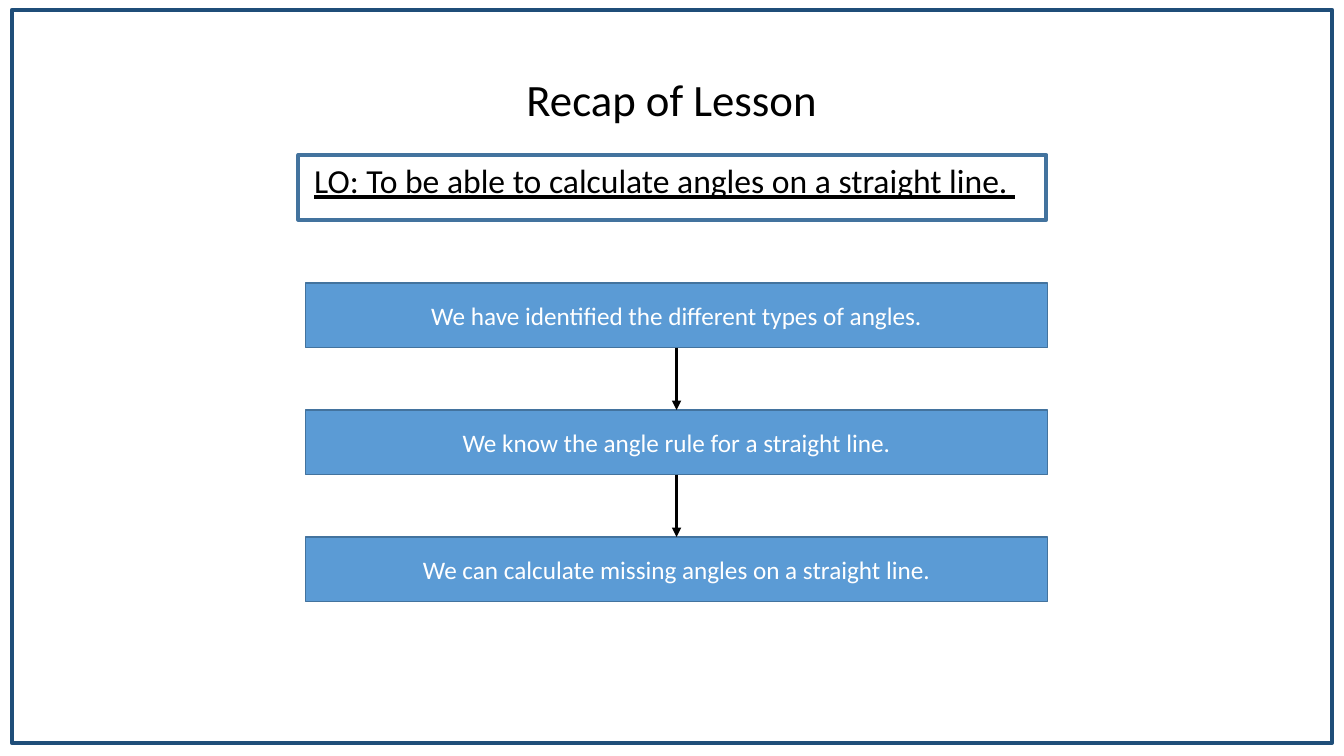
from lxml.etree import SubElement
from pptx import Presentation
from pptx.dml.color import RGBColor
from pptx.enum.shapes import MSO_CONNECTOR, MSO_SHAPE
from pptx.enum.text import MSO_ANCHOR, MSO_AUTO_SIZE, PP_ALIGN
from pptx.oxml.ns import qn
from pptx.util import Cm, Pt

TITLE = "Recap of Lesson"
OBJECTIVE = "LO: To be able to calculate angles on a straight line. "
STEPS = [
    "We have identified the different types of angles.",
    "We know the angle rule for a straight line.",
    "We can calculate missing angles on a straight line.",
]

FONT = "Calibri"
BLACK = RGBColor(0x00, 0x00, 0x00)
WHITE = RGBColor(0xFF, 0xFF, 0xFF)
NAVY = RGBColor(0x1F, 0x4E, 0x79)
STEEL = RGBColor(0x43, 0x73, 0x9E)
BLUE = RGBColor(0x5B, 0x9B, 0xD5)

STEP_LEFT, STEP_TOP = Cm(7.7), Cm(7.13)
STEP_WIDTH, STEP_HEIGHT = Cm(18.7), Cm(1.63)
STEP_PITCH = Cm(3.2)

prs = Presentation()
prs.slide_width, prs.slide_height = Cm(33.87), Cm(19.05)
slide = prs.slides.add_slide(prs.slide_layouts[6])


def write(shape, wording, size, color, align, underline=None):
    shape.text_frame.text = wording
    paragraph = shape.text_frame.paragraphs[0]
    paragraph.alignment = align
    font = paragraph.runs[0].font
    font.name, font.size, font.underline = FONT, Pt(size), underline
    font.color.rgb = color


def add_box(left, top, width, height, fill, line, line_width):
    box = slide.shapes.add_shape(MSO_SHAPE.RECTANGLE, left, top, width, height)
    box.shadow.inherit = False
    if fill is None:
        box.fill.background()
    else:
        box.fill.solid()
        box.fill.fore_color.rgb = fill
    box.line.color.rgb = line
    box.line.width = Pt(line_width)
    return box


def add_down_arrow(x, top, bottom):
    arrow = slide.shapes.add_connector(MSO_CONNECTOR.STRAIGHT, x, top, x, bottom)
    arrow.line.color.rgb = BLACK
    arrow.line.width = Pt(2.25)
    SubElement(arrow.line._get_or_add_ln(), qn("a:tailEnd"), type="triangle")
    SubElement(arrow._element.spPr, qn("a:effectLst"))


add_box(Cm(0.3), Cm(0.25), Cm(33.27), Cm(18.47), None, NAVY, 3)

title = slide.shapes.add_textbox(Cm(12.98), Cm(1.68), Cm(7.9), Cm(1.63))
title.text_frame.word_wrap = False
title.text_frame.auto_size = MSO_AUTO_SIZE.SHAPE_TO_FIT_TEXT
write(title, TITLE, 32, BLACK, PP_ALIGN.CENTER)

add_box(Cm(7.52), Cm(3.91), Cm(18.85), Cm(1.63), WHITE, STEEL, 3)
objective = slide.shapes.add_textbox(Cm(7.67), Cm(3.91), Cm(18.52), Cm(0.76))
objective.text_frame.word_wrap = True
write(objective, OBJECTIVE, 24, BLACK, PP_ALIGN.LEFT, underline=True)

step_tops = [STEP_TOP + i * STEP_PITCH for i in range(len(STEPS))]
for step, top in zip(STEPS, step_tops):
    step_box = add_box(STEP_LEFT, top, STEP_WIDTH, STEP_HEIGHT, BLUE, STEEL, 1)
    step_box.text_frame.vertical_anchor = MSO_ANCHOR.MIDDLE
    write(step_box, step, 18, WHITE, PP_ALIGN.CENTER)

for top, next_top in zip(step_tops, step_tops[1:]):
    add_down_arrow(STEP_LEFT + STEP_WIDTH // 2, top + STEP_HEIGHT, next_top)

prs.save("out.pptx")
